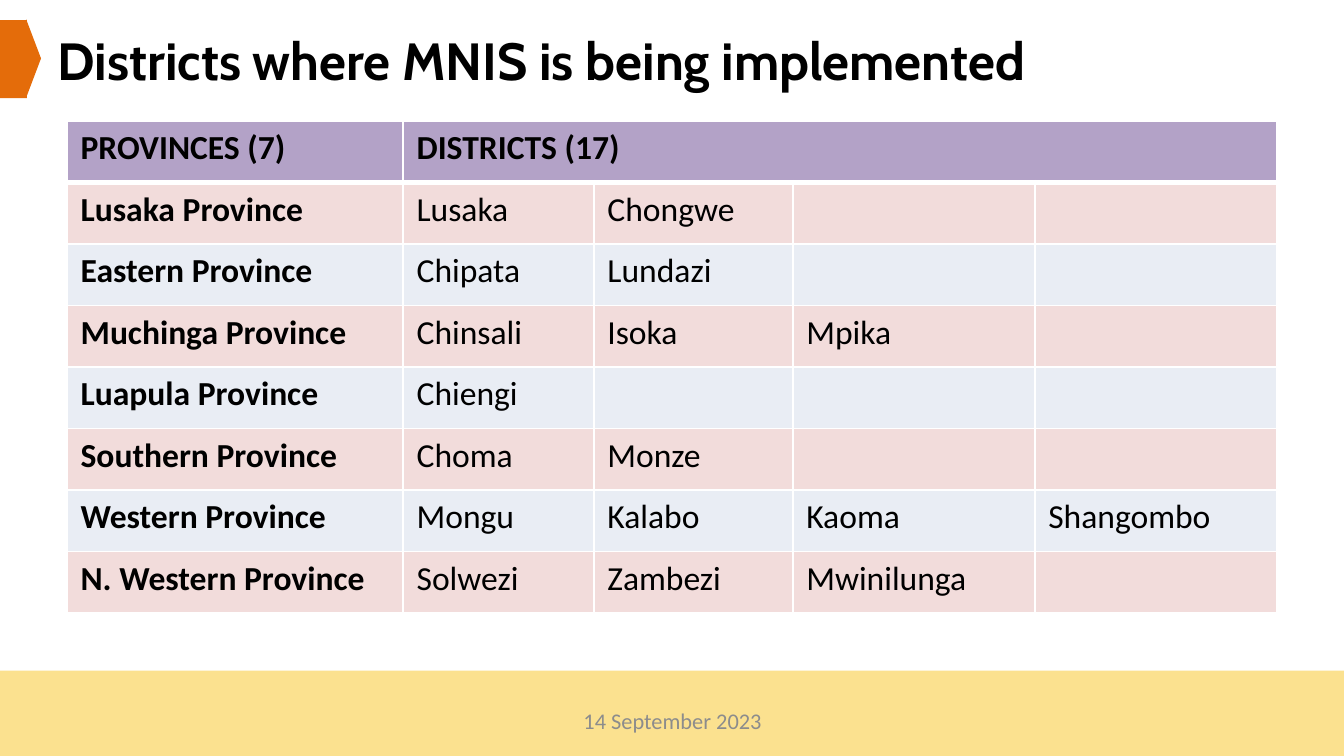
import pptx
import pptx.dml.color
import pptx.enum.shapes
import pptx.enum.text
import pptx.oxml.ns
import pptx.util
from lxml import etree

Inches = pptx.util.Inches
Pt = pptx.util.Pt
RGBColor = pptx.dml.color.RGBColor
Shape = pptx.enum.shapes.MSO_SHAPE
Align = pptx.enum.text.PP_ALIGN
Anchor = pptx.enum.text.MSO_ANCHOR

BLACK = RGBColor(0x00, 0x00, 0x00)
WHITE = RGBColor(0xFF, 0xFF, 0xFF)
GREY = RGBColor(0x8C, 0x8C, 0x8C)
SAND = RGBColor(0xFB, 0xE1, 0x8F)
ORANGE = RGBColor(0xE4, 0x6C, 0x0A)
PURPLE = RGBColor(0xB3, 0xA2, 0xC7)
PINK = RGBColor(0xF2, 0xDC, 0xDB)
PALE = RGBColor(0xE9, 0xED, 0xF4)

WIDTHS = [2.5, 1.42, 1.48, 1.8, 1.8]
HEIGHT = 3.66
ROWS = [
    ["PROVINCES (7)", "DISTRICTS (17)"],
    ["Lusaka Province", "Lusaka", "Chongwe"],
    ["Eastern Province", "Chipata", "Lundazi"],
    ["Muchinga Province", "Chinsali", "Isoka", "Mpika"],
    ["Luapula Province", "Chiengi"],
    ["Southern Province", "Choma", "Monze"],
    ["Western Province", "Mongu", "Kalabo", "Kaoma", "Shangombo"],
    ["N. Western Province", "Solwezi", "Zambezi", "Mwinilunga"],
]


def style(frame, size, name, color, bold=False):
    for para in frame.paragraphs:
        for run in para.runs:
            run.font.size = Pt(size)
            run.font.name = name
            run.font.color.rgb = color
            run.font.bold = bold


def add_block(slide, kind, left, top, width, height, color, turn=0):
    block = slide.shapes.add_shape(
        kind, Inches(left), Inches(top), Inches(width), Inches(height))
    block.rotation = turn
    block.shadow.inherit = False
    block.fill.solid()
    block.fill.fore_color.rgb = color
    block.line.fill.background()


def add_title(slide, text):
    title = slide.shapes.title
    title.left, title.top = Inches(0.33), Inches(0.23)
    title.width, title.height = Inches(9), Inches(0.42)
    frame = title.text_frame
    frame.text = text
    frame.vertical_anchor = Anchor.MIDDLE
    frame.paragraphs[0].alignment = Align.LEFT
    style(frame, 28, "Cabin", BLACK, True)


def add_date(slide, text):
    box = slide.shapes.add_textbox(
        Inches(3.42), Inches(5.21), Inches(3.17), Inches(0.3))
    frame = box.text_frame
    frame.word_wrap = True
    frame.text = text
    frame.vertical_anchor = Anchor.MIDDLE
    frame.paragraphs[0].alignment = Align.CENTER
    style(frame, 12, "Calibri", GREY)


def set_border(cell, side, width):
    """Draw one white side; call in the order L, R, T, B, before the fill."""
    qn = pptx.oxml.ns.qn
    line = etree.SubElement(
        cell._tc.get_or_add_tcPr(), qn("a:ln" + side), w=str(Pt(width)))
    fill = etree.SubElement(line, qn("a:solidFill"))
    etree.SubElement(fill, qn("a:srgbClr"), val=str(WHITE))


def format_cell(cell, row, col):
    for side in "LRTB":
        thick = (row, side) in [(0, "B"), (1, "T")]
        set_border(cell, side, 3 if thick else 1)
    cell.fill.solid()
    cell.fill.fore_color.rgb = PURPLE if row == 0 else PINK if row % 2 else PALE
    style(cell.text_frame, 18, "Calibri", BLACK, row == 0 or col == 0)


def add_districts(slide):
    table = slide.shapes.add_table(
        len(ROWS), len(WIDTHS), Inches(0.5), Inches(0.9),
        Inches(sum(WIDTHS)), Inches(HEIGHT)).table
    for col, width in zip(table.columns, WIDTHS):
        col.width = Inches(width)
    for r, texts in enumerate(ROWS):
        table.rows[r].height = Inches(HEIGHT / len(ROWS))
        for c in range(len(WIDTHS)):
            cell = table.cell(r, c)
            if c < len(texts):
                cell.text_frame.text = texts[c]
            format_cell(cell, r, c)
    table.cell(0, 1).merge(table.cell(0, len(WIDTHS) - 1))


def main():
    deck = pptx.Presentation()
    deck.slide_width = Inches(10)
    deck.slide_height = Inches(10 * 9 / 16)
    slide = deck.slides.add_slide(deck.slide_layouts[5])
    add_block(slide, Shape.RECTANGLE, 0, 4.99, 10, 0.65, SAND)
    add_block(slide, Shape.RECTANGLE, 0, 0.15, 0.2, 0.58, ORANGE)
    add_block(slide, Shape.ISOSCELES_TRIANGLE, -0.04, 0.38, 0.58, 0.11, ORANGE, 90)
    add_districts(slide)
    add_date(slide, "14 September 2023")
    add_title(slide, "Districts where MNIS is being implemented")
    deck.save("out.pptx")


if __name__ == "__main__":
    main()
